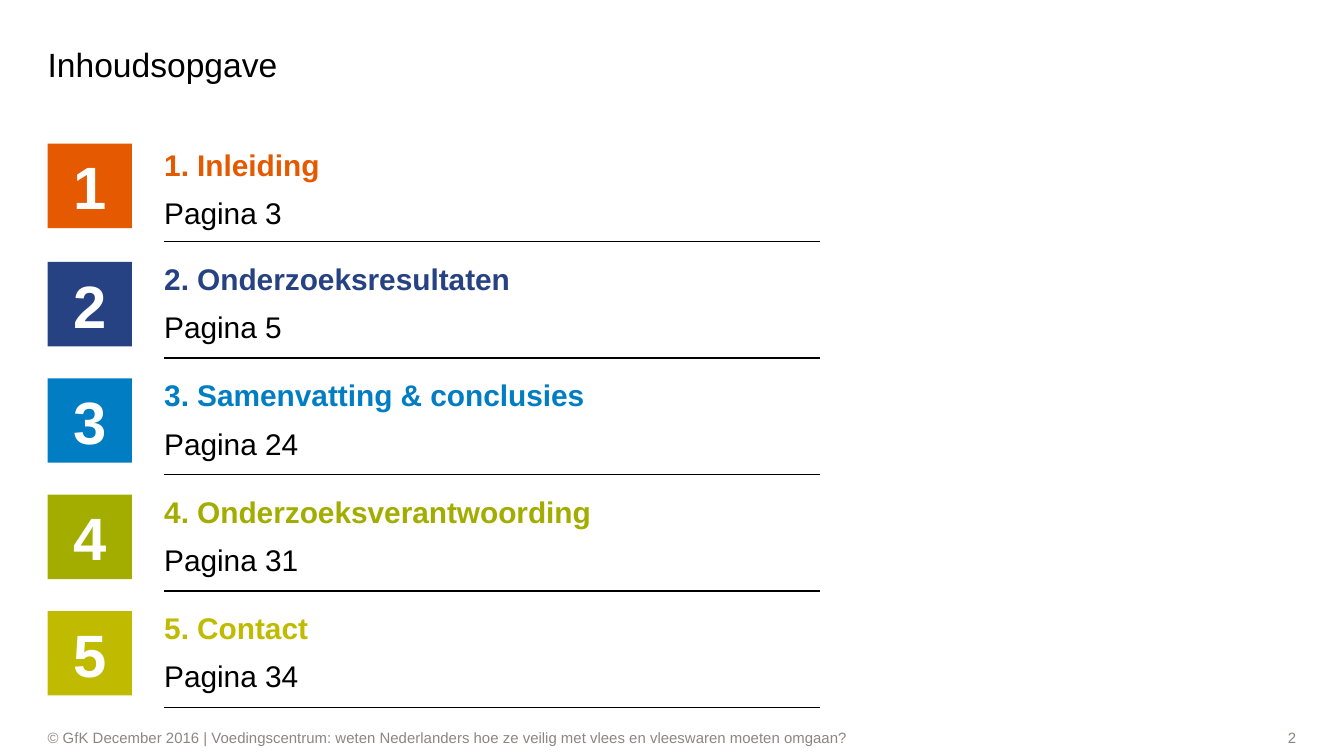
import pptx
import pptx.dml.color
import pptx.enum.shapes
import pptx.enum.text
import pptx.util
from lxml import etree

Pt = pptx.util.Pt
ALIGN = pptx.enum.text.PP_ALIGN
ANCHOR = pptx.enum.text.MSO_ANCHOR

COLORS = {
    "black": "000000", "white": "FFFFFF", "grey": "8E8581",
    "orange": "E55A00", "navy": "264283", "blue": "007DC3",
    "green": "A2AD00", "lime": "C1BB00",
}
CHAPTERS = [
    ("Inleiding", 3, "orange"),
    ("Onderzoeksresultaten", 5, "navy"),
    ("Samenvatting & conclusies", 24, "blue"),
    ("Onderzoeksverantwoording", 31, "green"),
    ("Contact", 34, "lime"),
]
FOOTER = ("© GfK December 2016 | Voedingscentrum: weten Nederlanders "
          "hoe ze veilig met vlees en vleeswaren moeten omgaan?")

MARGIN = 25.5
ENTRY_LEFT = 88
FIRST_TOP = 67.2
PITCH = 62.35
BADGE_SIZE = 45.2
FOOTER_TOP, FOOTER_HEIGHT = 389.5, 11.5


def rgb(color):
    return pptx.dml.color.RGBColor.from_string(COLORS[color])


class SlideBuilder:
    font_name = "Arial"

    def __init__(self, slide):
        self.slide = slide

    def format_frame(self, frame, anchor, insets=(0, 0, 0, 0), wrap=True):
        left, top, right, bottom = (Pt(inset) for inset in insets)
        values = {"margin_left": left, "margin_top": top,
                  "margin_right": right, "margin_bottom": bottom,
                  "vertical_anchor": anchor, "word_wrap": wrap,
                  "auto_size": pptx.enum.text.MSO_AUTO_SIZE.NONE}
        for attribute, value in values.items():
            setattr(frame, attribute, value)

    def add_text(self, paragraph, text, size, color, bold=False, align=ALIGN.LEFT):
        paragraph.alignment = align
        run = paragraph.add_run()
        run.text = text
        values = {"name": self.font_name, "size": Pt(size), "bold": bold}
        for attribute, value in values.items():
            setattr(run.font, attribute, value)
        run.font.color.rgb = rgb(color)

    def title(self, text, left, top, width, height):
        title = self.slide.shapes.title
        values = {"left": left, "top": top, "width": width, "height": height}
        for attribute, value in values.items():
            setattr(title, attribute, Pt(value))
        self.format_frame(title.text_frame, ANCHOR.BOTTOM)
        self.add_text(title.text_frame.paragraphs[0], text, 18, "black")

    def box(self, text, left, top, width, height, fill, size, color,
            bold=False, align=ALIGN.LEFT, inset=0, wrap=True):
        """Filled rectangle with one line of text, centred vertically."""
        shape = self.slide.shapes.add_shape(
            pptx.enum.shapes.MSO_SHAPE.RECTANGLE,
            Pt(left), Pt(top), Pt(width), Pt(height))
        shape.shadow.inherit = False
        shape.fill.solid()
        shape.fill.fore_color.rgb = rgb(fill)
        shape.line.fill.background()
        self.format_frame(shape.text_frame, ANCHOR.MIDDLE, (inset,) * 4, wrap)
        self.add_text(shape.text_frame.paragraphs[0], text, size, color, bold, align)

    def entry(self, heading, page, color, left, top, width, height):
        """Chapter heading with its page number below."""
        frame = self.slide.shapes.add_textbox(
            Pt(left), Pt(top), Pt(width), Pt(height)).text_frame
        self.format_frame(frame, ANCHOR.TOP, (0, 10, 0, 0))
        self.add_text(frame.paragraphs[0], heading, 16, color, bold=True)
        frame.paragraphs[0].space_after = Pt(6.8)
        self.add_text(frame.add_paragraph(), page, 16, "black")

    def rule(self, left, right, y):
        line = self.slide.shapes.add_connector(
            pptx.enum.shapes.MSO_CONNECTOR.STRAIGHT,
            Pt(left), Pt(y), Pt(right), Pt(y))
        line.line.color.rgb = rgb("black")
        line.line.width = Pt(0.75)
        etree.SubElement(line._element.spPr, pptx.oxml.ns.qn("a:effectLst"))


def main():
    deck = pptx.Presentation()
    deck.slide_width, deck.slide_height = Pt(720), Pt(405)
    builder = SlideBuilder(deck.slides.add_slide(deck.slide_layouts[5]))

    builder.box("2", 592.5, FOOTER_TOP, 102, FOOTER_HEIGHT,
                "white", 8, "grey", align=ALIGN.RIGHT)
    builder.box(FOOTER, MARGIN, FOOTER_TOP, 556, FOOTER_HEIGHT,
                "white", 8, "grey")
    builder.title("Inhoudsopgave", MARGIN, 0, 505, 45.4)

    for index, (heading, page, color) in enumerate(CHAPTERS):
        top = FIRST_TOP + index * PITCH
        # The first badge and entry sit slightly apart from the even grid.
        badge_shift, entry_shift = (-1, 1.2) if index == 0 else (0, 0)
        builder.rule(ENTRY_LEFT, 439.2, top + PITCH)
        builder.box(str(index + 1), MARGIN, top + 10.8 + badge_shift,
                    BADGE_SIZE, BADGE_SIZE, color, 32, "white", bold=True,
                    align=ALIGN.CENTER, inset=5.7, wrap=False)
        builder.entry(f"{index + 1}. {heading}", f"Pagina {page}", color,
                      ENTRY_LEFT, top + entry_shift, 363, PITCH)

    deck.save("out.pptx")


if __name__ == "__main__":
    main()
